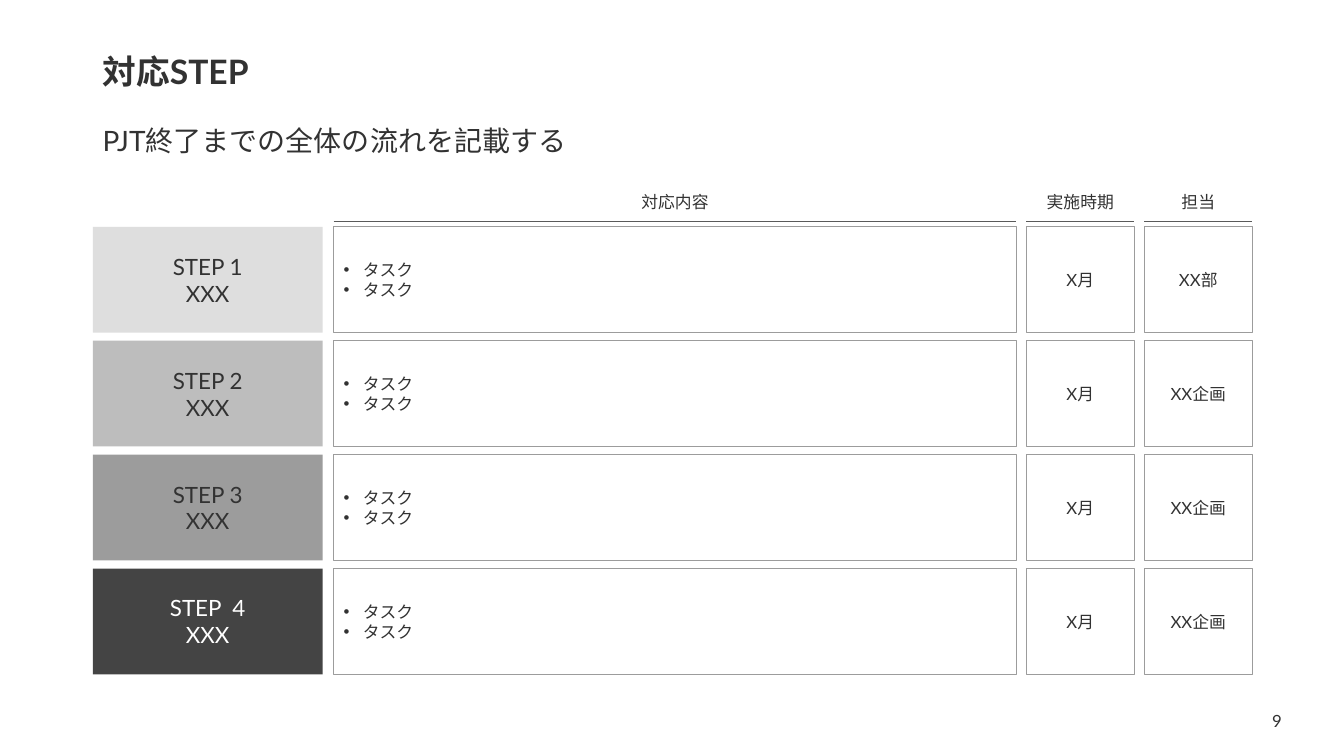
from dataclasses import dataclass

from lxml.etree import SubElement
from pptx import Presentation
from pptx.dml.color import RGBColor
from pptx.enum.shapes import MSO_CONNECTOR, MSO_SHAPE
from pptx.enum.text import MSO_ANCHOR, PP_ALIGN
from pptx.oxml.ns import qn
from pptx.shapes.autoshape import Shape
from pptx.shapes.shapetree import GroupShapes, SlideShapes
from pptx.util import Inches, Pt


@dataclass(frozen=True)
class Theme:
    font: str = "Lato"
    ink: str = "323232"
    inverse: str = "FFFFFF"
    border: str = "9C9C9C"
    rule: str = "5A5A5A"
    title_size: int = 24
    message_size: int = 20
    step_size: int = 16
    detail_size: int = 12
    hairline: float = 0.5


@dataclass(frozen=True)
class Box:
    left: float
    top: float
    width: float
    height: float


@dataclass(frozen=True)
class Column:
    heading: str
    left: float
    width: float
    bulleted: bool = False


@dataclass(frozen=True)
class Step:
    label: str
    fill: str
    ink: str
    details: tuple[str, str, str]


THEME = Theme()
LEFT = 0.92
LABEL_WIDTH = 2.28
FIRST_ROW_TOP = 2.25
ROW_HEIGHT = 1.05
ROW_PITCH = 1.13
HEADING_TOP = 1.85
HEADING_HEIGHT = 0.3
RULE_TOP = 2.2
BULLET_INDENT = 0.19

COLUMNS = (
    Column("対応内容", 3.31, 6.77, bulleted=True),
    Column("実施時期", 10.18, 1.07),
    Column("担当", 11.35, 1.07),
)
TASKS = "タスク\nタスク"
STEPS = (
    Step("STEP 1\nXXX", "DEDEDE", THEME.ink, (TASKS, "X月", "XX部")),
    Step("STEP 2\nXXX", "BDBDBD", THEME.ink, (TASKS, "X月", "XX企画")),
    Step("STEP 3\nXXX", "9C9C9C", THEME.ink, (TASKS, "X月", "XX企画")),
    Step("STEP  4\nXXX", "444444", THEME.inverse, (TASKS, "X月", "XX企画")),
)


def rgb(value: str) -> RGBColor:
    return RGBColor.from_string(value)


def write(shape: Shape, text: str, size: int, ink: str = THEME.ink,
          align: PP_ALIGN = PP_ALIGN.CENTER, bold: bool = False) -> None:
    frame = shape.text_frame
    frame.word_wrap = True
    frame.vertical_anchor = MSO_ANCHOR.MIDDLE
    frame.text = text
    for paragraph in frame.paragraphs:
        paragraph.alignment = align
        for run in paragraph.runs:
            run.font.name = THEME.font
            run.font.size = Pt(size)
            run.font.bold = bold
            run.font.color.rgb = rgb(ink)


def add_text(shapes: SlideShapes | GroupShapes, box: Box, text: str, size: int,
             align: PP_ALIGN = PP_ALIGN.CENTER, bold: bool = False) -> Shape:
    label = shapes.add_textbox(Inches(box.left), Inches(box.top),
                               Inches(box.width), Inches(box.height))
    write(label, text, size, align=align, bold=bold)
    return label


def add_panel(shapes: SlideShapes, box: Box, fill: str | None = None) -> Shape:
    panel = shapes.add_shape(MSO_SHAPE.RECTANGLE, Inches(box.left), Inches(box.top),
                             Inches(box.width), Inches(box.height))
    panel.shadow.inherit = False
    if fill:
        panel.fill.solid()
        panel.fill.fore_color.rgb = rgb(fill)
        panel.line.fill.background()
    else:
        panel.fill.background()
        panel.line.color.rgb = rgb(THEME.border)
        panel.line.width = Pt(THEME.hairline)
    return panel


def add_bullets(shape: Shape) -> None:
    indent = Inches(BULLET_INDENT)
    for paragraph in shape.text_frame.paragraphs:
        properties = paragraph._p.get_or_add_pPr()
        properties.set("marL", str(indent))
        properties.set("indent", str(-indent))
        SubElement(properties, qn("a:buFont"), typeface="Arial")
        SubElement(properties, qn("a:buChar"), char="•")


def add_heading(shapes: SlideShapes, column: Column) -> None:
    heading = shapes.add_group_shape().shapes
    rule = heading.add_connector(
        MSO_CONNECTOR.STRAIGHT, Inches(column.left), Inches(RULE_TOP),
        Inches(column.left + column.width), Inches(RULE_TOP))
    rule.line.color.rgb = rgb(THEME.rule)
    rule.line.width = Pt(THEME.hairline)
    SubElement(rule._element.spPr, qn("a:effectLst"))
    add_text(heading, Box(column.left, HEADING_TOP, column.width, HEADING_HEIGHT),
             column.heading, THEME.detail_size)


def add_step(shapes: SlideShapes, step: Step, top: float) -> None:
    label = add_panel(shapes, Box(LEFT, top, LABEL_WIDTH, ROW_HEIGHT), step.fill)
    write(label, step.label, THEME.step_size, step.ink)
    for column, detail in zip(COLUMNS, step.details):
        cell = add_panel(shapes, Box(column.left, top, column.width, ROW_HEIGHT))
        align = PP_ALIGN.LEFT if column.bulleted else PP_ALIGN.CENTER
        write(cell, detail, THEME.detail_size, align=align)
        if column.bulleted:
            add_bullets(cell)


def main() -> None:
    presentation = Presentation()
    presentation.slide_width = Inches(13.33)
    presentation.slide_height = Inches(7.5)
    shapes = presentation.slides.add_slide(presentation.slide_layouts[6]).shapes

    title = add_text(shapes, Box(LEFT, 0.4, 11.5, 0.67), "対応STEP",
                     THEME.title_size, PP_ALIGN.LEFT, bold=True)
    message = add_text(shapes, Box(LEFT, 1.08, 11.5, 0.67),
                       "PJT終了までの全体の流れを記載する",
                       THEME.message_size, PP_ALIGN.LEFT)
    for lead in (title, message):
        lead.text_frame.paragraphs[0].line_spacing = 0.9
    message.text_frame.paragraphs[0].space_before = Pt(10)

    for column in COLUMNS:
        add_heading(shapes, column)
    for row, step in enumerate(STEPS):
        add_step(shapes, step, FIRST_ROW_TOP + row * ROW_PITCH)
    add_text(shapes, Box(12.42, 6.95, 0.49, 0.4), "9", THEME.detail_size)

    presentation.save("out.pptx")


if __name__ == "__main__":
    main()
